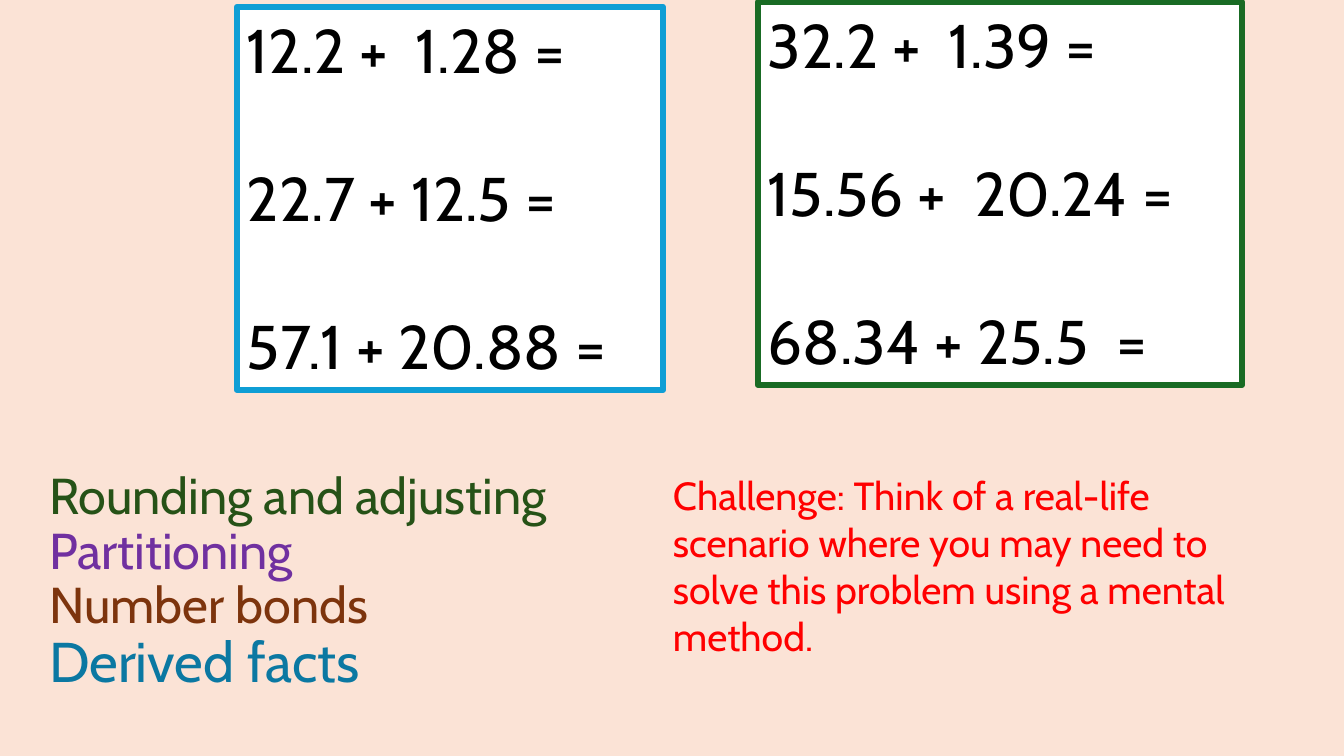
"""Build a slide of decimal addition sums with mental methods and a challenge."""
from lxml.etree import SubElement
from pptx import Presentation
from pptx.dml.color import RGBColor as Rgb
from pptx.enum.shapes import MSO_SHAPE as Kind
from pptx.enum.text import MSO_ANCHOR as Anchor, MSO_AUTO_SIZE as Fit, PP_ALIGN as Align
from pptx.oxml.ns import qn
from pptx.util import Pt

PX = 914400 / 100.8
HUES = {
    "page": "FBE3D6", "card": "FFFFFF", "ink": "000000",
    "blue": "0F9ED5", "green": "196B24", "moss": "265217",
    "plum": "7030A0", "rust": "7D340D", "teal": "0B78A2", "red": "FF0000",
}
FRAME = {"word_wrap": True, "auto_size": Fit.NONE, "vertical_anchor": Anchor.TOP}


def place(*nums):
    return [round(n * PX) for n in nums]


def write(frame, rows, gap=0, lead=1.0):
    for key, val in FRAME.items():
        setattr(frame, key, val)
    for i, (text, size, hue) in enumerate(rows):
        para = frame.paragraphs[0] if i == 0 else frame.add_paragraph()
        form = {"alignment": Align.LEFT, "line_spacing": lead,
                "space_before": Pt(gap if i else 0), "space_after": Pt(0)}
        for key, val in form.items():
            setattr(para, key, val)
        run = para.add_run()
        run.text = text
        for key, val in {"name": "Cabin", "size": Pt(size)}.items():
            setattr(run.font, key, val)
        run.font.color.rgb = Rgb.from_string(HUES[hue])


deck = Presentation()
deck.slide_width, deck.slide_height = place(1344, 756)
slide = deck.slides.add_slide(deck.slide_layouts[1])
slide.background.fill.solid()
slide.background.fill.fore_color.rgb = Rgb.from_string(HUES["page"])
title = slide.shapes.title.element
title.getparent().remove(title)

cards = [
    ("blue", (237, 7, 426, 383), ["12.2 +  1.28 =", "22.7 + 12.5 =", "57.1 + 20.88 ="]),
    ("green", (758, 2, 484, 383), ["32.2 +  1.39 =", "15.56 +  20.24 =", "68.34 + 25.5  ="]),
]
for hue, area, sums in cards:
    card = slide.shapes.add_shape(Kind.RECTANGLE, *place(*area))
    card.shadow.inherit = False
    card.fill.solid()
    card.fill.fore_color.rgb = Rgb.from_string(HUES["card"])
    card.line.color.rgb = Rgb.from_string(HUES[hue])
    card.line.width = Pt(4.5)
    write(card.text_frame, [(text, 44, "ink") for text in sums], gap=53)

ways = slide.placeholders[1]
ways.left, ways.top, ways.width, ways.height = place(39, 466, 564, 146)
write(ways.text_frame, [
    ("Rounding and adjusting", 36, "moss"),
    ("Partitioning", 36, "plum"),
    ("Number bonds", 36, "rust"),
    ("Derived facts", 40, "teal"),
], lead=0.9)
for para in ways.text_frame.paragraphs:
    props = para._p.get_or_add_pPr()
    for key in ("marL", "indent"):
        props.set(key, "0")
    SubElement(props, qn("a:buNone"))

task = slide.shapes.add_textbox(*place(663, 466, 630, 201))
write(task.text_frame, [(
    "Challenge: Think of a real-life scenario where you may need to "
    "solve this problem using a mental method.", 28, "red")])

deck.save("out.pptx")
